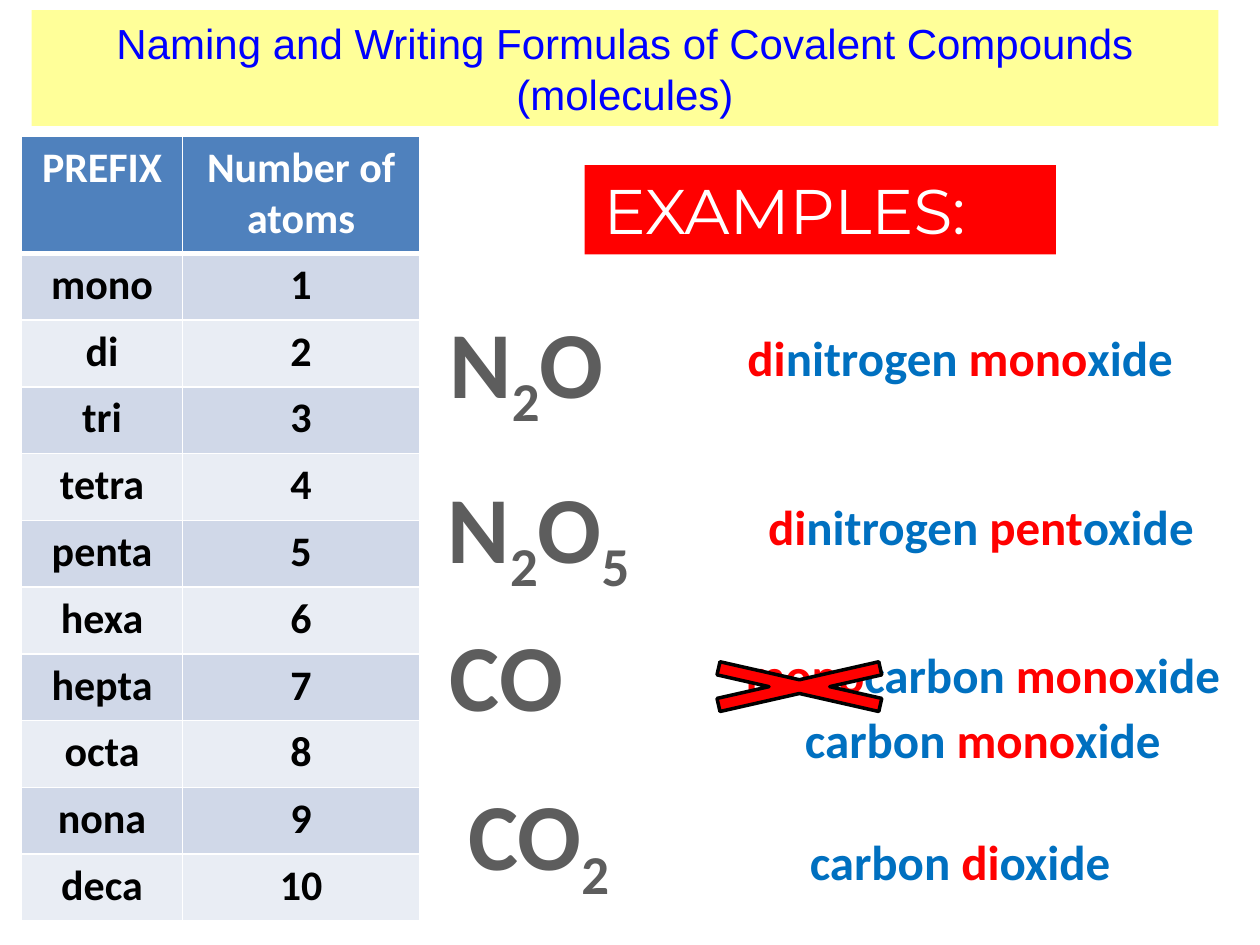
from dataclasses import dataclass

from lxml import etree
from pptx import Presentation
from pptx.dml.color import RGBColor
from pptx.enum.shapes import MSO_SHAPE
from pptx.enum.text import MSO_ANCHOR, MSO_AUTO_SIZE, PP_ALIGN
from pptx.oxml.ns import qn
from pptx.util import Inches, Pt

CENTER, LEFT = PP_ALIGN.CENTER, PP_ALIGN.LEFT
TOP, MIDDLE = MSO_ANCHOR.TOP, MSO_ANCHOR.MIDDLE
FIT_TEXT, NO_FIT = MSO_AUTO_SIZE.SHAPE_TO_FIT_TEXT, MSO_AUTO_SIZE.NONE
RECTANGLE, CROSS = MSO_SHAPE.RECTANGLE, MSO_SHAPE.MATH_MULTIPLY
TITLE_ONLY = 5


@dataclass(frozen=True)
class Theme:
    title_font: str = "Arial"
    body_font: str = "Calibri"
    banner_font: str = "Montserrat"
    title_size: int = 24
    table_size: int = 24
    name_size: int = 28
    banner_size: int = 36
    formula_size: int = 54
    white: str = "FFFFFF"
    black: str = "000000"
    title_text: str = "0000FF"
    title_fill: str = "FFFF99"
    prefix: str = "FF0000"
    element: str = "0070C0"
    formula: str = "5D5D5D"
    header: str = "4F81BD"
    bands: tuple = ("D0D8E8", "E9EDF4")


class SlideBuilder:
    def __init__(self, slide, theme):
        self.slide = slide
        self.theme = theme

    def format_run(self, run, font, size, color, bold=False):
        run.font.name = font
        run.font.size = Pt(size)
        run.font.bold = bold
        run.font.color.rgb = RGBColor.from_string(color)

    def paint(self, target, color):
        target.fill.solid()
        target.fill.fore_color.rgb = RGBColor.from_string(color)

    def place(self, shape, left, top, width, height):
        shape.left, shape.top = Inches(left), Inches(top)
        shape.width, shape.height = Inches(width), Inches(height)

    def title(self, text, *box):
        title = self.slide.shapes.title
        self.place(title, *box)
        self.paint(title, self.theme.title_fill)
        frame = title.text_frame
        frame.text = text
        frame.auto_size = NO_FIT
        frame.vertical_anchor = MIDDLE
        paragraph = frame.paragraphs[0]
        paragraph.alignment = CENTER
        self.format_run(paragraph.runs[0], self.theme.title_font,
                        self.theme.title_size, self.theme.title_text)

    def shape(self, kind, fill, *box):
        shape = self.slide.shapes.add_shape(kind, *map(Inches, box))
        shape.shadow.inherit = False
        self.paint(shape, fill)
        shape.line.fill.background()
        return shape

    def banner(self, text, *box):
        frame = self.shape(RECTANGLE, self.theme.prefix, *box).text_frame
        frame.text = text
        frame.vertical_anchor = TOP
        frame.margin_left = Inches(0.15)
        paragraph = frame.paragraphs[0]
        paragraph.alignment = LEFT
        self.format_run(paragraph.runs[0], self.theme.banner_font,
                        self.theme.banner_size, self.theme.white)

    def cross(self, *box):
        cross = self.shape(CROSS, self.theme.prefix, *box)
        cross.adjustments[0] = 0.19
        cross.line.color.rgb = RGBColor.from_string(self.theme.black)
        cross.line.width = Pt(2)

    def label(self, *box):
        """Add a centred one-line text box and return its paragraph."""
        frame = self.slide.shapes.add_textbox(*map(Inches, box)).text_frame
        frame.word_wrap = False
        frame.auto_size = FIT_TEXT
        frame.paragraphs[0].alignment = CENTER
        return frame.paragraphs[0]

    def formula(self, symbols, *box):
        """Write a formula with its digits as subscripts."""
        paragraph = self.label(*box)
        for symbol in symbols:
            run = paragraph.add_run()
            run.text = symbol
            self.format_run(run, self.theme.body_font, self.theme.formula_size,
                            self.theme.formula, True)
            if symbol.isdigit():
                run.font._element.set("baseline", "-25000")

    def compound_name(self, parts, *box):
        """Write a name, colouring the parts that are numeric prefixes."""
        paragraph = self.label(*box)
        for part in parts:
            run = paragraph.add_run()
            run.text = part
            color = self.theme.prefix if part in NAME_PREFIXES else self.theme.element
            self.format_run(run, self.theme.body_font, self.theme.name_size, color, True)

    def cell_borders(self, cell, widths):
        properties = cell._tc.get_or_add_tcPr()
        for side, points in widths.items():
            line = etree.SubElement(properties, qn("a:ln" + side), w=str(Pt(points)))
            fill = etree.SubElement(line, qn("a:solidFill"))
            etree.SubElement(fill, qn("a:srgbClr"), val=self.theme.white)

    def table(self, rows, column_widths, row_heights, left, top):
        table = self.slide.shapes.add_table(
            len(rows), len(column_widths), Inches(left), Inches(top),
            Inches(sum(column_widths)), Inches(sum(row_heights))).table
        for column, width in zip(table.columns, column_widths):
            column.width = Inches(width)
        for r, (texts, height) in enumerate(zip(rows, row_heights)):
            table.rows[r].height = Inches(height)
            fill = self.theme.bands[(r - 1) % 2] if r else self.theme.header
            color = self.theme.black if r else self.theme.white
            borders = {"L": 1, "R": 1, "T": 3 if r == 1 else 1, "B": 1 if r else 3}
            for c, text in enumerate(texts):
                cell = table.cell(r, c)
                self.cell_borders(cell, borders)
                self.paint(cell, fill)
                cell.text_frame.text = text
                paragraph = cell.text_frame.paragraphs[0]
                paragraph.alignment = CENTER
                self.format_run(paragraph.runs[0], self.theme.body_font,
                                self.theme.table_size, color, True)


PREFIXES = ["mono", "di", "tri", "tetra", "penta",
            "hexa", "hepta", "octa", "nona", "deca"]
NAME_PREFIXES = {"mono", "di", "pent"}

FORMULAS = [
    ("N2O", 3.41, 2.36, 1.54),
    ("N2O5", 3.36, 3.67, 1.83),
    (["CO"], 3.42, 4.85, 1.2),
    (["CO", "2"], 3.53, 6.11, 1.49),
]
COMPOUND_NAMES = [
    (["di", "nitrogen ", "mono", "xide"], 5.61, 2.55, 4.02),
    (["di", "nitrogen ", "pent", "oxide"], 5.75, 3.89, 4.07),
    (["mono", "carbon ", "mono", "xide"], 5.8, 5.07, 4),
    (["carbon ", "mono", "xide"], 6.11, 5.58, 3.38),
    (["carbon ", "di", "oxide"], 6.15, 6.55, 2.94),
]


def main():
    presentation = Presentation()
    presentation.slide_width, presentation.slide_height = Inches(10), Inches(7.5)
    slide = presentation.slides.add_slide(presentation.slide_layouts[TITLE_ONLY])
    builder = SlideBuilder(slide, Theme())

    # Heading and examples banner
    builder.title("Naming and Writing Formulas of Covalent Compounds (molecules)",
                  0.25, 0.08, 9.42, 0.92)
    builder.banner("EXAMPLES:", 4.64, 1.31, 3.74, 0.71)

    # Prefix table
    rows = [("PREFIX", "Number of atoms")]
    rows += [(prefix, str(count)) for count, prefix in enumerate(PREFIXES, 1)]
    builder.table(rows, [1.28, 1.88], [0.93] + [0.53] * len(PREFIXES), 0.17, 1.08)

    # Worked examples
    for symbols, left, top, width in FORMULAS:
        builder.formula(symbols, left, top, width, 1.01)
    for parts, left, top, width in COMPOUND_NAMES:
        builder.compound_name(parts, left, top, width, 0.57)

    # Strike out the wrong first prefix
    builder.cross(5.11, 5.17, 2.47, 0.56)

    presentation.save("out.pptx")


if __name__ == "__main__":
    main()
